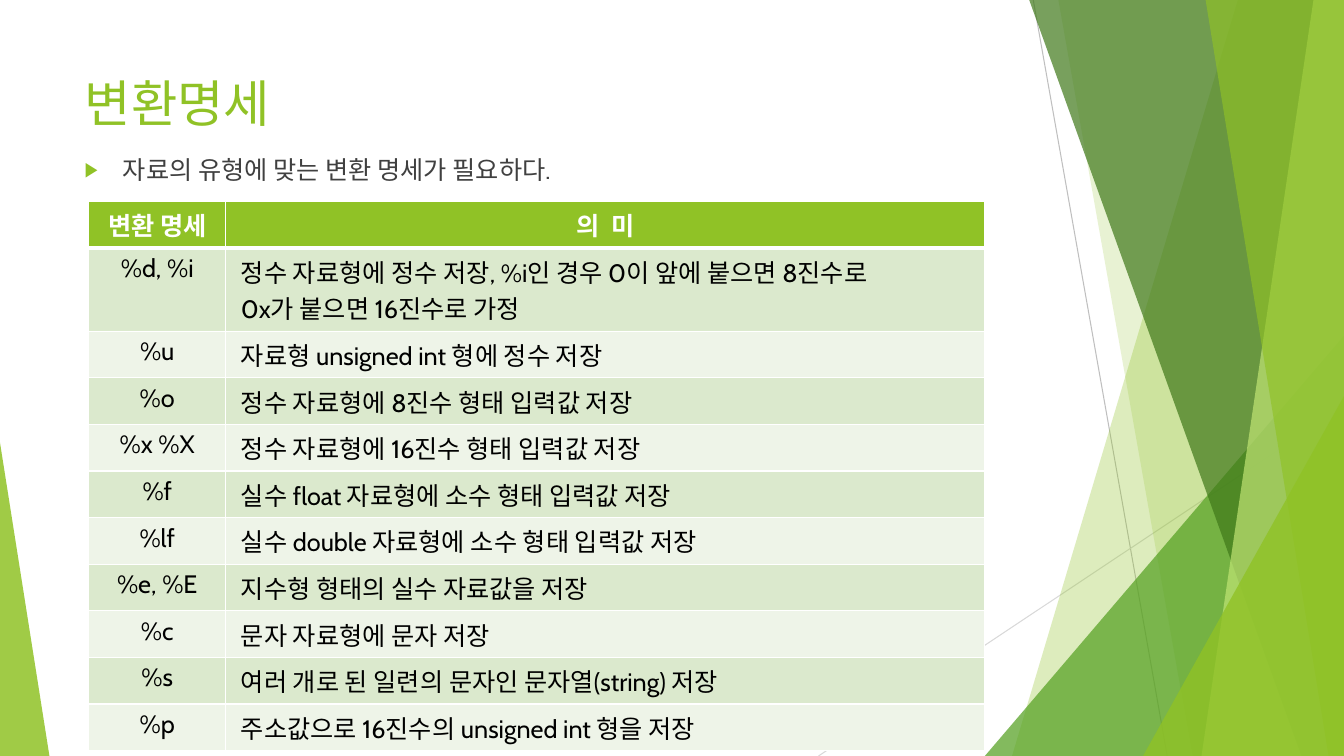
from lxml.etree import SubElement
from pptx import Presentation
from pptx.dml.color import RGBColor
from pptx.enum.shapes import MSO_CONNECTOR, MSO_SHAPE
from pptx.enum.text import MSO_ANCHOR, MSO_AUTO_SIZE, PP_ALIGN
from pptx.oxml import parse_xml
from pptx.oxml.ns import nsdecls, qn
from pptx.util import Inches, Pt

TITLE = "변환명세"
POINT = "자료의 유형에 맞는 변환 명세가 필요하다."
HEAD = ("변환 명세", "의  미")
ROWS = [
    ("%d, %i", "정수 자료형에 정수 저장, %i인 경우 0이 앞에 붙으면 8진수로\n0x가 붙으면 16진수로 가정"),
    ("%u", "자료형 unsigned int 형에 정수 저장"),
    ("%o", "정수 자료형에 8진수 형태 입력값 저장"),
    ("%x %X", "정수 자료형에 16진수 형태 입력값 저장"),
    ("%f", "실수 float 자료형에 소수 형태 입력값 저장"),
    ("%lf", "실수 double 자료형에 소수 형태 입력값 저장"),
    ("%e, %E", "지수형 형태의 실수 자료값을 저장"),
    ("%c", "문자 자료형에 문자 저장"),
    ("%s", "여러 개로 된 일련의 문자인 문자열(string) 저장"),
    ("%p", "주소값으로 16진수의 unsigned int 형을 저장"),
]

THEME = {
    "font": "Cabin", "big": 36, "text": 18,
    "lime": "90C226", "green": "54A021", "dark": "3F7819", "pale": "C0E474",
    "gray": "404040", "black": "000000", "white": "FFFFFF",
    "bands": ("DBE9CD", "EEF4E8"),
}

LINES = [
    ((76.88, 0), (86.85, 100), "BFBFBF"),
    ((100, 53.73), (60.9, 100), "D9D9D9"),
]
DECOR = [
    ("band", (92.1, 75.3), "lime", 30),
    ("band", (78.75, 88.73), "lime", 20),
    ("wedge", (73.28, 44.4, 26.72, 1), "green", 72),
    ("band", (76.58, 96.83), "dark", 70),
    ("band", (97.73, 89.4), "pale", 70),
    ("band", (89.7, 98.85), "lime", 65),
    ("wedge", (85.05, 52.4, 14.95, 1), "lime", 80),
    ("wedge", (0, 58.53, 3.68, 0), "lime", 85),
]
TITLE_BOX = (5.55, 8.93, 70.5, 19.2)
BODY_BOX = (5.55, 19.73, 70.5, 68.4)
GRID = {"left": 6.6, "top": 26.67, "cols": (10.2, 56.48), "row": 5.47}

deck = Presentation()
deck.slide_width, deck.slide_height = Inches(13.33), Inches(7.5)
slide = deck.slides.add_slide(deck.slide_layouts[1])
shapes = slide.shapes


def across(share):
    return round(deck.slide_width * share / 100)


def down(share):
    return round(deck.slide_height * share / 100)


def apply(target, values):
    for name, value in values.items():
        setattr(target, name, value)


def place(shape, box):
    left, top, width, height = box
    apply(shape, {"left": across(left), "top": down(top),
                  "width": across(width), "height": down(height)})


def write(frame, text, size, color, bold=False, align=PP_ALIGN.LEFT):
    frame.text = text
    for para in frame.paragraphs:
        para.alignment = align
        for run in para.runs:
            apply(run.font, {"name": THEME["font"], "size": Pt(size), "bold": bold})
            run.font.color.rgb = RGBColor.from_string(color)


def paint(shape, color, alpha):
    shape.shadow.inherit = False
    shape.line.fill.background()
    shape.fill.solid()
    shape.fill.fore_color.rgb = RGBColor.from_string(color)
    tone = shape.fill._xPr.find(".//" + qn("a:srgbClr"))
    SubElement(tone, qn("a:alpha"), val=str(alpha * 1000))


def band(top, foot):
    pen = shapes.build_freeform(across(top), 0)
    pen.add_line_segments([(across(100), 0), (across(100), down(100)),
                           (across(foot), down(100))])
    return pen.convert_to_shape()


def wedge(left, top, width, peak):
    shape = shapes.add_shape(MSO_SHAPE.ISOSCELES_TRIANGLE, across(left), down(top),
                             across(width), down(100 - top))
    shape.adjustments[0] = peak
    return shape


def edge(cell, widths):
    props = cell._tc.get_or_add_tcPr()
    for spot, (side, width) in enumerate(zip("LRTB", widths)):
        props.insert(spot, parse_xml(
            f'<a:ln{side} {nsdecls("a")} w="{Pt(width)}"><a:solidFill>'
            f'<a:srgbClr val="{THEME["white"]}"/></a:solidFill></a:ln{side}>'))


def bullet(para):
    props = para._p.get_or_add_pPr()
    props.set("marL", str(Inches(0.38)))
    props.set("indent", str(-Inches(0.38)))
    tint = SubElement(props, qn("a:buClr"))
    SubElement(tint, qn("a:srgbClr"), val=THEME["lime"])
    SubElement(props, qn("a:buSzPct"), val="80000")
    SubElement(props, qn("a:buChar"), char="▶")


def draw_decor():
    for start, end, color in LINES:
        line = shapes.add_connector(
            MSO_CONNECTOR.STRAIGHT, across(start[0]), down(start[1]),
            across(end[0]), down(end[1]))
        line.line.width = Pt(0.75)
        line.line.color.rgb = RGBColor.from_string(color)
        SubElement(line._element.spPr, qn("a:effectLst"))
    makers = {"band": band, "wedge": wedge}
    for kind, spots, color, alpha in DECOR:
        paint(makers[kind](*spots), THEME[color], alpha)


def fill_text():
    title, body = shapes.title, slide.placeholders[1]
    jobs = [(title, TITLE_BOX, TITLE, "big", "lime"),
            (body, BODY_BOX, POINT, "text", "gray")]
    for holder, box, text, size, color in jobs:
        place(holder, box)
        write(holder.text_frame, text, THEME[size], THEME[color])
        apply(holder.text_frame, {"vertical_anchor": MSO_ANCHOR.TOP, "word_wrap": True,
                                  "auto_size": MSO_AUTO_SIZE.NONE})
        shapes._spTree.append(holder._element)
    para = body.text_frame.paragraphs[0]
    para.space_before = Pt(10)
    bullet(para)


def draw_table():
    data = [HEAD] + ROWS
    cols = GRID["cols"]
    table = shapes.add_table(
        len(data), len(cols), across(GRID["left"]), down(GRID["top"]),
        across(sum(cols)), down(GRID["row"] * len(data))).table
    for col, width in zip(table.columns, cols):
        col.width = across(width)
    for r, row in enumerate(data):
        table.rows[r].height = down(GRID["row"])
        head = r == 0
        back = THEME["lime"] if head else THEME["bands"][(r - 1) % 2]
        ink = THEME["white"] if head else THEME["black"]
        for c, text in enumerate(row):
            cell = table.cell(r, c)
            mid = head or c == 0
            write(cell.text_frame, text, THEME["text"], ink, head,
                  PP_ALIGN.CENTER if mid else PP_ALIGN.LEFT)
            if not mid:
                cell.margin_left = Inches(0.15)
            cell.fill.solid()
            cell.fill.fore_color.rgb = RGBColor.from_string(back)
            edge(cell, (1, 1, 3 if r == 1 else 1, 3 if head else 1))


def main():
    draw_decor()
    fill_text()
    draw_table()
    deck.save("out.pptx")


if __name__ == "__main__":
    main()
